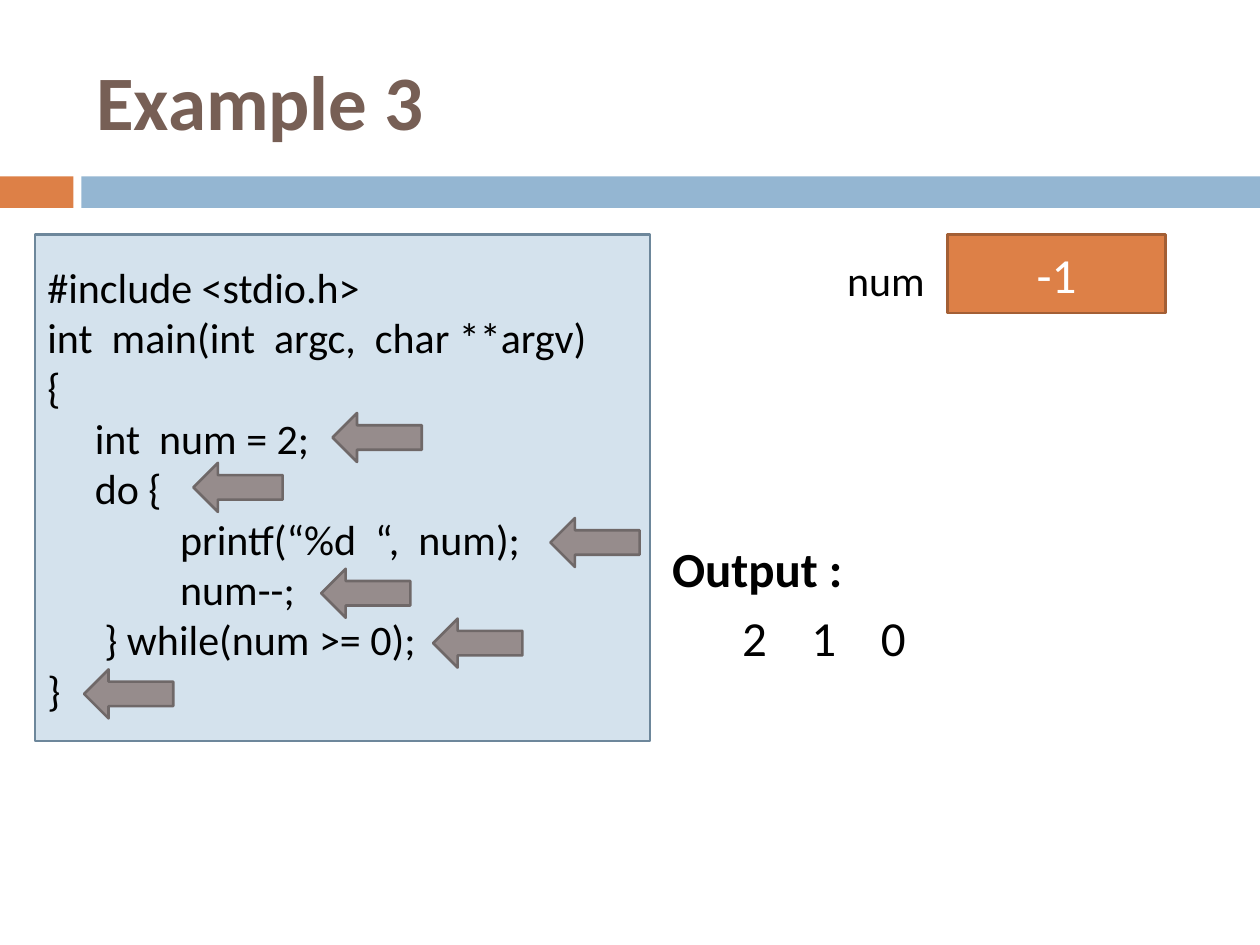
from typing import NamedTuple

from pptx import Presentation
from pptx.dml.color import RGBColor
from pptx.enum import shapes, text
from pptx.util import Pt

FONT = "Calibri"
BLACK, WHITE, BROWN = "000000", "FFFFFF", "775F55"
ORANGE, BLUE = "DD8047", "94B6D2"
CODE_SIZE, VALUE_SIZE = 24, 28
SPACE_WIDTH = 5.42  # one blank at the code size
ALIGN, ANCHOR = text.PP_ALIGN, text.MSO_ANCHOR


class Box(NamedTuple):
    left: float
    top: float
    width: float
    height: float


class CodeLine(NamedTuple):
    code: str
    indent: int = 0  # in blanks


class Style(NamedTuple):
    size: float
    color: str = BLACK
    bold: bool = False
    align: ALIGN = ALIGN.LEFT


CODE = [
    CodeLine("#include <stdio.h>"),
    CodeLine("int  main(int  argc,  char **argv)"),
    CodeLine("{"),
    CodeLine("int  num = 2;", 5),
    CodeLine("do {", 5),
    CodeLine("printf(“%d  “,  num);", 14),
    CodeLine("num--;", 14),
    CodeLine("} while(num >= 0);", 6),
    CodeLine("}"),
]
# Left and top of the arrow beside each executed line
STEP_ARROWS = [(190, 236), (110.5, 264.5), (314.5, 296),
               (183.5, 325), (247.5, 353.5), (48, 382.5)]


def rgb(color: str) -> RGBColor:
    return RGBColor.from_string(color)


def points(box: Box) -> list[Pt]:
    return [Pt(length) for length in box]


def add_block(slide, kind, box: Box, fill: str, line: str | None = None):
    block = slide.shapes.add_shape(kind, *points(box))
    block.shadow.inherit = False
    block.fill.solid()
    block.fill.fore_color.rgb = rgb(fill)
    if line:
        block.line.color.rgb = rgb(line)
        block.line.width = Pt(1.5)
    else:
        block.line.fill.background()
    return block


def write(frame, lines: list[CodeLine], style: Style, anchor=ANCHOR.TOP) -> None:
    """Fill a text frame with one styled paragraph per line."""
    frame.word_wrap = True
    frame.vertical_anchor = anchor
    for number, line in enumerate(lines):
        paragraph = frame.add_paragraph() if number else frame.paragraphs[0]
        paragraph.text = line.code
        paragraph.alignment = style.align
        paragraph.font.name = FONT
        paragraph.font.size = Pt(style.size)
        paragraph.font.bold = style.bold
        paragraph.font.color.rgb = rgb(style.color)
        if line.indent:
            margin = Pt(line.indent * SPACE_WIDTH)
            paragraph._p.get_or_add_pPr().set("marL", str(int(margin)))


def add_label(slide, box: Box, label: str, style: Style, anchor=ANCHOR.TOP) -> None:
    frame = slide.shapes.add_textbox(*points(box)).text_frame
    write(frame, [CodeLine(label)], style, anchor)


def main() -> None:
    deck = Presentation()
    deck.slide_width, deck.slide_height = Pt(720), Pt(540)
    slide = deck.slides.add_slide(deck.slide_layouts[6])
    rectangle = shapes.MSO_SHAPE.RECTANGLE

    add_block(slide, rectangle, Box(0, 100.8, 42, 18), ORANGE)
    add_block(slide, rectangle, Box(46.5, 100.8, 673.5, 18), BLUE)
    add_label(slide, Box(48, 18, 642, 78), "Example 3",
              Style(44, BROWN, bold=True), ANCHOR.MIDDLE)

    listing = add_block(slide, rectangle, Box(20, 134, 351.5, 289.5),
                        "D4E2ED", "6D879B")
    write(listing.text_frame, CODE, Style(CODE_SIZE), ANCHOR.MIDDLE)

    for left, top in STEP_ARROWS:
        arrow = add_block(slide, shapes.MSO_SHAPE.RIGHT_ARROW,
                          Box(left, top, 51, 28), "968C8C", "6F6868")
        arrow.rotation = 180

    add_label(slide, Box(473, 142, 62.5, 36), "num",
              Style(CODE_SIZE, align=ALIGN.RIGHT))
    variable = add_block(slide, rectangle, Box(541.5, 134, 124.5, 45),
                         ORANGE, "A35F35")
    write(variable.text_frame, [CodeLine("-1")],
          Style(VALUE_SIZE, WHITE, align=ALIGN.CENTER), ANCHOR.MIDDLE)

    add_label(slide, Box(377, 304, 136, 41), "Output :",
              Style(VALUE_SIZE, bold=True))
    for column, value in enumerate("210"):
        add_label(slide, Box(417 + 39.6 * column, 343.5, 51, 41), value,
                  Style(VALUE_SIZE))

    deck.save("out.pptx")


if __name__ == "__main__":
    main()
